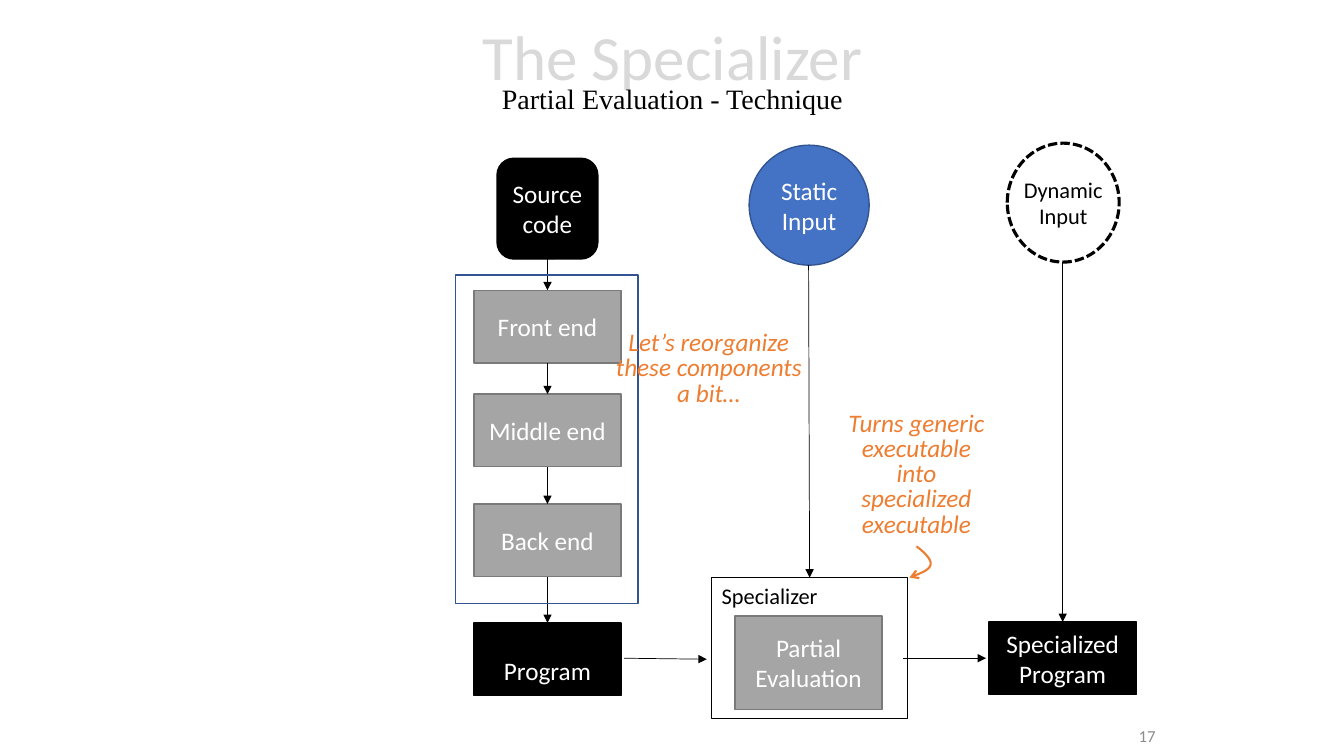
import pptx
import pptx.util
import pptx.dml.color
import pptx.enum.dml
import pptx.enum.shapes
import pptx.enum.text
import pptx.oxml
import pptx.oxml.ns

Inches = pptx.util.Inches
Pt = pptx.util.Pt
SHAPES = pptx.enum.shapes.MSO_SHAPE
ALIGN = pptx.enum.text.PP_ALIGN
ANCHOR = pptx.enum.text.MSO_ANCHOR

BLACK, WHITE, ORANGE = "000000", "FFFFFF", "ED7D31"
GREY, GREY_EDGE = "A5A5A5", "7A7A7A"
BLUE, BLUE_EDGE = "4472C4", "325491"
TOP, BOTTOM = 0, 2
COLUMN_LEFT, BOX_WIDTH, BOX_HEIGHT = 4.7, 1.46, 0.72


def paint(target, colour):
    """Give a font, fill or line colour format a hex colour."""
    target.rgb = pptx.dml.color.RGBColor.from_string(colour)


def apply(target, values):
    for name, value in values.items():
        setattr(target, name, value)


def add_span(para, text, size, colour, font="Calibri", italic=None):
    span = para.add_run()
    span.text = text
    apply(span.font, {"name": font, "size": Pt(size), "italic": italic})
    paint(span.font.color, colour)


def write(box, text, size, colour, align=ALIGN.CENTER, anchor=ANCHOR.MIDDLE,
          italic=None, spacing=None):
    frame = box.text_frame
    apply(frame, {"word_wrap": True, "vertical_anchor": anchor})
    para = frame.paragraphs[0]
    apply(para, {"alignment": align, "line_spacing": spacing})
    add_span(para, text, size, colour, italic=italic)


def add_box(page, kind, place, fill, edge, edge_width=1):
    box = page.shapes.add_shape(kind, *map(Inches, place))
    box.shadow.inherit = False
    if fill:
        box.fill.solid()
        paint(box.fill.fore_color, fill)
    else:
        box.fill.background()
    paint(box.line.color, edge)
    box.line.width = Pt(edge_width)
    return box


def add_label(page, place, text, size, colour, **style):
    label = page.shapes.add_textbox(*map(Inches, place))
    write(label, text, size, colour, **style)


def add_arrowhead(shape, head):
    tail = pptx.oxml.parse_xml(
        f'<a:tailEnd {pptx.oxml.ns.nsdecls("a")} type="{head}"/>')
    shape.line._get_or_add_ln().append(tail)


def add_arrow(page, start, end, source=None, target=None):
    arrow = page.shapes.add_connector(
        pptx.enum.shapes.MSO_CONNECTOR.STRAIGHT, *map(Inches, start + end))
    if source is not None:
        arrow.begin_connect(source, BOTTOM)
    if target is not None:
        arrow.end_connect(target, TOP)
    paint(arrow.line.color, BLACK)
    arrow.line.width = Pt(0.5)
    add_arrowhead(arrow, "triangle")
    arrow._element.spPr.append(pptx.oxml.parse_xml(
        f'<a:effectLst {pptx.oxml.ns.nsdecls("a")}/>'))


def curve_points(start, *segments, steps=10):
    """Sample a chain of cubic curves, start point included."""
    points = [start]
    for first, second, end in segments:
        corners = (points[-1], first, second, end)
        for step in range(1, steps + 1):
            t = step / steps
            weights = ((1 - t) ** 3, 3 * t * (1 - t) ** 2,
                       3 * t ** 2 * (1 - t), t ** 3)
            points.append(tuple(
                sum(w * corner[axis] for w, corner in zip(weights, corners))
                for axis in (0, 1)))
    return points


def add_curved_arrow(page, start, *segments):
    # The builder rounds to whole units, so the points are given in EMU
    points = [(Inches(x), Inches(y))
              for x, y in curve_points(start, *segments)]
    builder = page.shapes.build_freeform(*points[0])
    builder.add_line_segments(points[1:], close=False)
    curve = builder.convert_to_shape()
    curve.shadow.inherit = False
    curve.fill.background()
    paint(curve.line.color, ORANGE)
    curve.line.width = Pt(1.5)
    add_arrowhead(curve, "arrow")


def add_title(page):
    title = page.shapes.title
    apply(title, dict(zip(("left", "top", "width", "height"),
                          map(Inches, (1.67, 0.03, 10, 1.45)))))
    apply(title.text_frame, {
        "word_wrap": True, "vertical_anchor": ANCHOR.MIDDLE,
        "auto_size": pptx.enum.text.MSO_AUTO_SIZE.NONE})
    para = title.text_frame.paragraphs[0]
    apply(para, {"alignment": ALIGN.CENTER, "line_spacing": 0.7})
    add_span(para, "The Specializer", 45, "D9D9D9")
    para.add_line_break()
    add_span(para, "Partial Evaluation - Technique", 20, BLACK,
             font="Times New Roman")


def main():
    deck = pptx.Presentation()
    apply(deck, {"slide_width": Inches(13.33), "slide_height": Inches(7.5)})
    page = deck.slides.add_slide(deck.slide_layouts[5])

    # Specializer with its inner stage
    specializer = add_box(page, SHAPES.RECTANGLE, (7.06, 5.73, 1.94, 1.4),
                          WHITE, BLACK)
    write(specializer, "Specializer", 16, BLACK, ALIGN.LEFT, ANCHOR.TOP)
    evaluation = add_box(page, SHAPES.RECTANGLE, (7.29, 6.11, BOX_WIDTH, 0.93),
                         GREY, GREY_EDGE)
    write(evaluation, "Partial Evaluation", 18, WHITE)

    # Title and page number
    add_title(page)
    add_label(page, (9.31, 7.1, 2.25, 0.4), "17", 12, "8C8C8C",
              align=ALIGN.RIGHT)

    # Compiler column, from source code to program
    source = add_box(page, SHAPES.ROUNDED_RECTANGLE, (4.93, 1.57, 1, 1),
                     BLACK, BLACK)
    write(source, "Source code", 18, WHITE)
    column = [source]
    for name, top in (("Front end", 2.88), ("Middle end", 3.91),
                      ("Back end", 5)):
        stage = add_box(page, SHAPES.RECTANGLE,
                        (COLUMN_LEFT, top, BOX_WIDTH, BOX_HEIGHT),
                        GREY, GREY_EDGE)
        write(stage, name, 18, WHITE)
        column.append(stage)
    program = add_box(page, SHAPES.RECTANGLE,
                      (COLUMN_LEFT, 6.18, BOX_WIDTH, BOX_HEIGHT), BLACK, BLACK)
    write(program, "Program", 18, WHITE, anchor=ANCHOR.BOTTOM)
    program.text_frame.margin_bottom = Inches(0.1)
    column.append(program)
    for upper, lower in zip(column, column[1:]):
        add_arrow(page, (5.43, 2.57), (5.43, 2.88), upper, lower)
    add_box(page, SHAPES.RECTANGLE, (4.52, 2.73, 1.81, 3.26), None, BLUE_EDGE)

    # Inputs and result
    static = add_box(page, SHAPES.OVAL, (7.43, 1.44, 1.19, 1.19),
                     BLUE, BLUE_EDGE)
    write(static, "Static Input", 18, WHITE)
    dynamic = add_box(page, SHAPES.OVAL, (9.99, 1.42, 1.11, 1.18),
                      WHITE, BLACK, 2.25)
    dynamic.line.dash_style = pptx.enum.dml.MSO_LINE.SQUARE_DOT
    write(dynamic, "Dynamic Input", 16, BLACK)
    apply(dynamic.text_frame, {"margin_left": 0, "margin_right": 0})
    result = add_box(page, SHAPES.RECTANGLE,
                     (9.81, 6.17, BOX_WIDTH, BOX_HEIGHT), BLACK, BLACK)
    write(result, "Specialized Program", 18, WHITE)

    # Arrows between the columns
    add_arrow(page, (8.02, 2.63), (8.03, 5.73), target=specializer)
    add_arrow(page, (10.54, 2.6), (10.54, 6.17), target=result)
    add_arrow(page, (6.19, 6.53), (7.01, 6.54))
    add_arrow(page, (8.96, 6.53), (9.78, 6.53))

    # Remarks
    remark = {"anchor": ANCHOR.TOP, "italic": True, "spacing": Pt(18)}
    add_label(page, (8.26, 4.04, 1.66, 1.37),
              "Turns generic executable into specialized executable",
              18, ORANGE, **remark)
    add_curved_arrow(page, (9.09, 5.42),
                     ((9.17, 5.48), (9.24, 5.55), (9.23, 5.6)),
                     ((9.22, 5.66), (9.12, 5.69), (9.02, 5.73)))
    add_label(page, (5.99, 3.24, 2.08, 0.86),
              "Let’s reorganize these components a bit…",
              18, ORANGE, **remark)

    deck.save("out.pptx")


if __name__ == "__main__":
    main()
